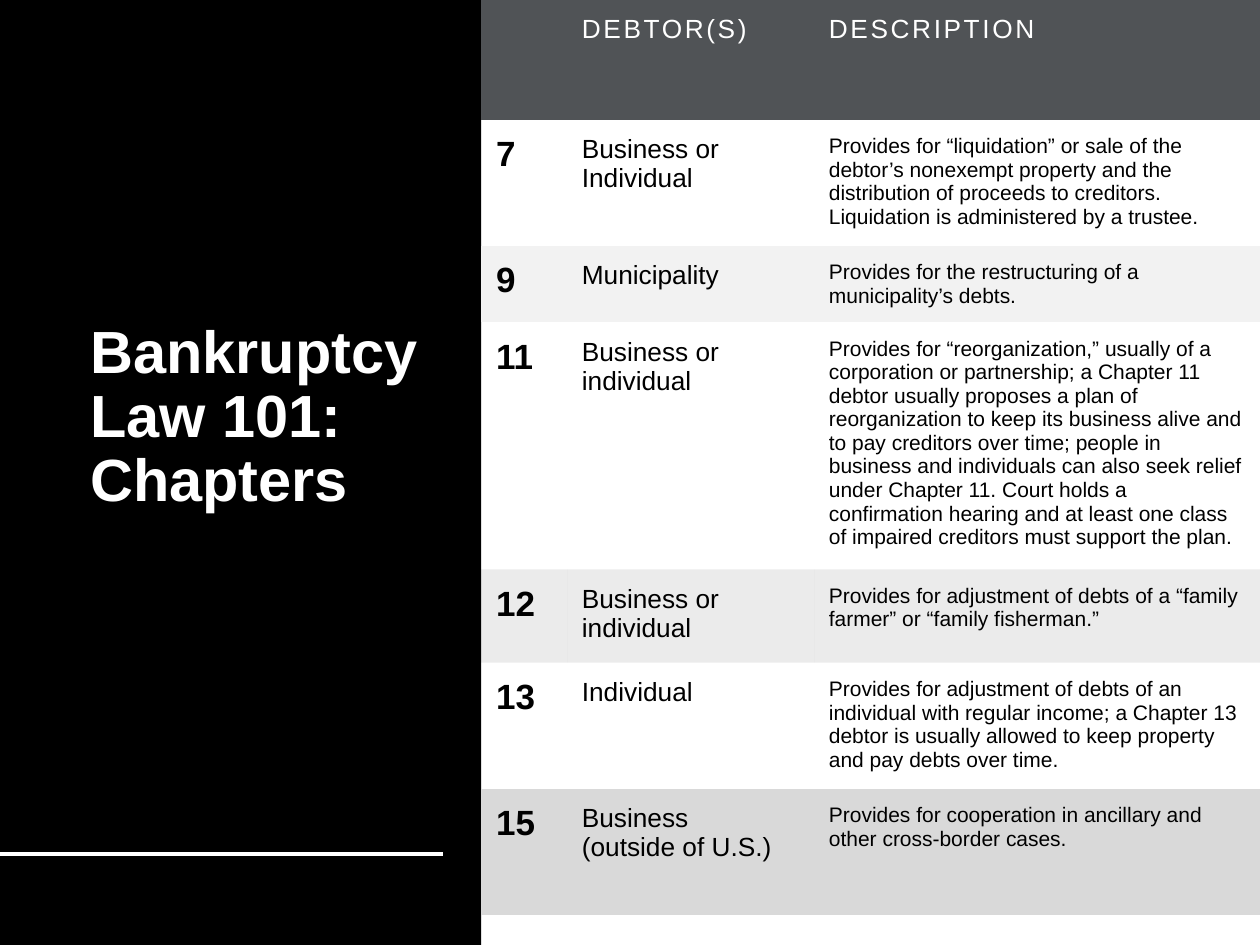
from dataclasses import dataclass
from typing import Optional

from lxml.etree import SubElement
from pptx import Presentation
from pptx.dml.color import RGBColor
from pptx.enum.shapes import MSO_CONNECTOR, MSO_SHAPE
from pptx.enum.text import MSO_ANCHOR, MSO_AUTO_SIZE, PP_ALIGN
from pptx.oxml.ns import qn
from pptx.util import Cm, Pt

NO_GRID_STYLE = "{2D5ABB26-0587-4C30-8999-92F81FD0307C}"


@dataclass(frozen=True)
class Theme:
    font: str = "Arial"
    black: RGBColor = RGBColor(0, 0, 0)
    white: RGBColor = RGBColor(255, 255, 255)
    header: RGBColor = RGBColor(0x50, 0x53, 0x56)
    pale: RGBColor = RGBColor(0xF2, 0xF2, 0xF2)
    grey: RGBColor = RGBColor(0xD9, 0xD9, 0xD9)
    title: Pt = Pt(34)
    number: Pt = Pt(20)
    debtor: Pt = Pt(15)
    description: Pt = Pt(12)


@dataclass(frozen=True)
class Chapter:
    number: str
    debtor: str
    description: str
    height: float
    fill: Optional[RGBColor] = None
    opacity: int = 100


THEME = Theme()
PANEL_WIDTH = Cm(9.7)
COLUMNS = (1.73, 4.98, 8.99)
HEADER_HEIGHT = 2.41
CHAPTERS = (
    Chapter("7", "Business or Individual",
            "Provides for “liquidation” or sale of the debtor’s nonexempt property and "
            "the distribution of proceeds to creditors. Liquidation is administered by "
            "a trustee.", 2.54),
    Chapter("9", "Municipality",
            "Provides for the restructuring of a municipality’s debts.",
            1.55, THEME.pale),
    Chapter("11", "Business or individual",
            "Provides for “reorganization,” usually of a corporation or partnership; "
            "a Chapter 11 debtor usually proposes a plan of reorganization to keep its "
            "business alive and to pay creditors over time; people in business and "
            "individuals can also seek relief under Chapter 11. Court holds a "
            "confirmation hearing and at least one class of impaired creditors must "
            "support the plan.", 4.98),
    Chapter("12", "Business or individual",
            "Provides for adjustment of debts of a “family farmer” or “family fisherman.”",
            1.88, THEME.black, 8),
    Chapter("13", "Individual",
            "Provides for adjustment of debts of an individual with regular income; "
            "a Chapter 13 debtor is usually allowed to keep property and pay debts "
            "over time.", 2.54),
    Chapter("15", "Business \v(outside of U.S.)",
            "Provides for cooperation in ancillary and other cross-border cases.",
            2.54, THEME.grey),
)


def add_panel(slide, height: int) -> None:
    """Draw the dark side panel behind the title."""
    sp = slide.shapes.add_shape(MSO_SHAPE.RECTANGLE, 0, 0, PANEL_WIDTH, height)
    sp.shadow.inherit = False
    sp.fill.solid()
    sp.fill.fore_color.rgb = THEME.black
    sp.line.fill.background()
    slide.shapes._spTree.insert(2, sp._element)


def set_title(slide, text: str) -> None:
    sp = slide.shapes.title
    sp.left, sp.top, sp.width, sp.height = Cm(1.57), Cm(1.55), Cm(7.44), Cm(13.77)
    tf = sp.text_frame
    tf.word_wrap = True
    tf.auto_size = MSO_AUTO_SIZE.NONE
    tf.vertical_anchor = MSO_ANCHOR.MIDDLE
    p = tf.paragraphs[0]
    p.text = text
    p.alignment = PP_ALIGN.LEFT
    p.line_spacing = 0.9
    p.font.name, p.font.size, p.font.bold = THEME.font, THEME.title, True
    p.font.color.rgb = THEME.white


def add_rule(slide) -> None:
    y = Cm(17.22)
    line = slide.shapes.add_connector(MSO_CONNECTOR.STRAIGHT, 0, y, Cm(8.94), y)
    line.line.color.rgb = THEME.white
    line.line.width = Pt(2)
    SubElement(line._element.spPr, qn("a:effectLst"))


def fill_cell(cell, color: Optional[RGBColor], opacity: int = 100) -> None:
    if color is None:
        cell.fill.background()
        return
    cell.fill.solid()
    cell.fill.fore_color.rgb = color
    if opacity < 100:
        clr = cell._tc.tcPr.find(".//" + qn("a:srgbClr"))
        SubElement(clr, qn("a:alpha"), val=str(opacity * 1000))


def write_cell(cell, text: str, size: Pt, color: RGBColor,
               bold: bool = False, tracking: int = 0) -> None:
    """Write one paragraph; tracking is in hundredths of a point."""
    cell.margin_left = cell.margin_right = cell.margin_top = cell.margin_bottom = Cm(0.3)
    p = cell.text_frame.paragraphs[0]
    p.text = text
    p.space_before = Pt(2.4)
    p.font.name, p.font.size, p.font.bold = THEME.font, size, bold
    p.font.color.rgb = color
    if tracking:
        for r in p.runs:
            r.font._element.set("spc", str(tracking))


def add_chapter_table(slide) -> None:
    heights = (HEADER_HEIGHT, *(c.height for c in CHAPTERS))
    table = slide.shapes.add_table(len(heights), len(COLUMNS), PANEL_WIDTH, 0,
                                   Cm(sum(COLUMNS)), Cm(sum(heights))).table
    table.first_row = table.horz_banding = False
    table._tbl.tblPr.find(qn("a:tableStyleId")).text = NO_GRID_STYLE
    for column, width in zip(table.columns, COLUMNS):
        column.width = Cm(width)
    for row, height in zip(table.rows, heights):
        row.height = Cm(height)

    for cell, text in zip(table.rows[0].cells, ("", "DEBTOR(S)", "DESCRIPTION")):
        fill_cell(cell, THEME.header)
        if text:
            write_cell(cell, text, THEME.debtor, THEME.white, tracking=150)

    for i, chapter in enumerate(CHAPTERS, start=1):
        number, debtor, description = cells = tuple(table.rows[i].cells)
        for cell in cells:
            fill_cell(cell, chapter.fill, chapter.opacity)
        write_cell(number, chapter.number, THEME.number, THEME.black, bold=True)
        write_cell(debtor, chapter.debtor, THEME.debtor, THEME.black)
        write_cell(description, chapter.description, THEME.description, THEME.black)


def main() -> None:
    prs = Presentation()
    prs.slide_width, prs.slide_height = Cm(25.4), Cm(19.05)
    slide = prs.slides.add_slide(prs.slide_layouts.get_by_name("Title Only"))
    add_panel(slide, prs.slide_height)
    set_title(slide, "Bankruptcy Law 101: Chapters")
    add_rule(slide)
    add_chapter_table(slide)
    prs.save("out.pptx")


if __name__ == "__main__":
    main()
